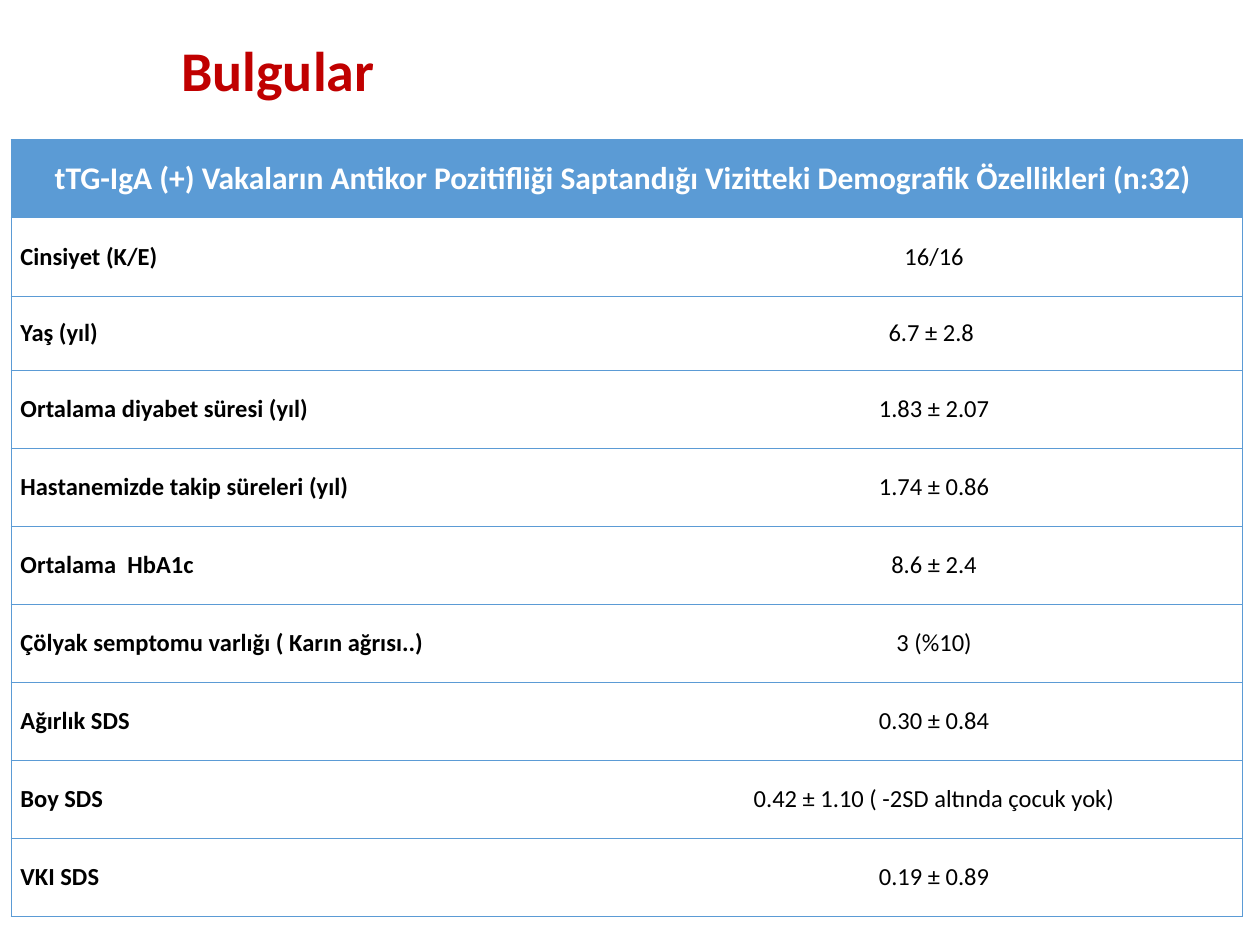
import pptx
import pptx.util
import pptx.dml.color
import pptx.enum.text
import pptx.oxml
import pptx.oxml.ns

Pt = pptx.util.Pt
ALIGN = pptx.enum.text.PP_ALIGN
MIDDLE = pptx.enum.text.MSO_ANCHOR.MIDDLE

TITLE = "Bulgular"
HEADER = "tTG-IgA (+) Vakaların Antikor Pozitifliği Saptandığı Vizitteki Demografik Özellikleri (n:32) "
ROWS = [
    ("Cinsiyet (K/E)", "16/16"),
    ("Yaş (yıl)", "6.7 ± 2.8 "),
    ("Ortalama diyabet süresi (yıl)", "1.83 ± 2.07"),
    ("Hastanemizde takip süreleri (yıl)", "1.74 ± 0.86"),
    ("Ortalama  HbA1c", "8.6 ± 2.4"),
    ("Çölyak semptomu varlığı ( Karın ağrısı..)", "3 (%10)"),
    ("Ağırlık SDS", "0.30 ± 0.84"),
    ("Boy SDS", "0.42 ± 1.10 ( -2SD altında çocuk yok)"),
    ("VKI SDS", "0.19 ± 0.89"),
]
BLUE = "5B9BD5"
COLS = [351.5, 352]
ROW_H, AGE_ROW_H = 44.6, 42.4
HEIGHTS = [ROW_H, ROW_H, AGE_ROW_H] + [ROW_H] * 7


def rgb(color):
    return pptx.dml.color.RGBColor.from_string(color)


def write(tf, text, size=14, color="000000", bold=False, align=ALIGN.LEFT, spacing=1.0):
    p = tf.paragraphs[0]
    p.alignment = align
    p.line_spacing = spacing
    r = p.add_run()
    r.text = text
    r.font.name = "Calibri"
    r.font.size = Pt(size)
    r.font.bold = bold
    r.font.color.rgb = rgb(color)


def format_cell(cell, fill=None, open_side=None):
    cell.vertical_anchor = MIDDLE
    cell.margin_left = cell.margin_right = Pt(5.4)
    cell.margin_top = cell.margin_bottom = 0
    tcPr = cell._tc.get_or_add_tcPr()
    for side in "LRTB":
        paint = "<a:noFill/>" if side == open_side else (
            f'<a:solidFill><a:srgbClr val="{BLUE}"/></a:solidFill>')
        tcPr.append(pptx.oxml.parse_xml(
            f'<a:ln{side} {pptx.oxml.ns.nsdecls("a")} w="{Pt(0.5)}">{paint}</a:ln{side}>'))
    if fill:
        cell.fill.solid()
        cell.fill.fore_color.rgb = rgb(fill)
    else:
        cell.fill.background()


prs = pptx.Presentation()
prs.slide_width, prs.slide_height = Pt(720), Pt(540)
s = prs.slides.add_slide(prs.slide_layouts[6])

tf = s.shapes.add_textbox(Pt(96.5), Pt(17.3), Pt(613.4), Pt(49)).text_frame
tf.word_wrap = True
tf.vertical_anchor = MIDDLE
write(tf, TITLE, size=32, color="C00000", bold=True, spacing=0.9)

table = s.shapes.add_table(len(HEIGHTS), len(COLS), Pt(6.3), Pt(79.9),
                           Pt(sum(COLS)), Pt(sum(HEIGHTS))).table
table.first_row = table.horz_banding = False
for column, width in zip(table.columns, COLS):
    column.width = Pt(width)
for row, height in zip(table.rows, HEIGHTS):
    row.height = Pt(height)

head = table.cell(0, 0)
head.merge(table.cell(0, 1))
for c in range(len(COLS)):
    format_cell(table.cell(0, c), fill=BLUE)
write(head.text_frame, HEADER, size=18, color="FFFFFF", bold=True, align=ALIGN.CENTER)

for i, (label, value) in enumerate(ROWS, 1):
    left, right = table.cell(i, 0), table.cell(i, 1)
    format_cell(left, open_side="R")
    format_cell(right, open_side="L")
    write(left.text_frame, label, bold=True)
    write(right.text_frame, value, align=ALIGN.CENTER)

prs.save("out.pptx")
